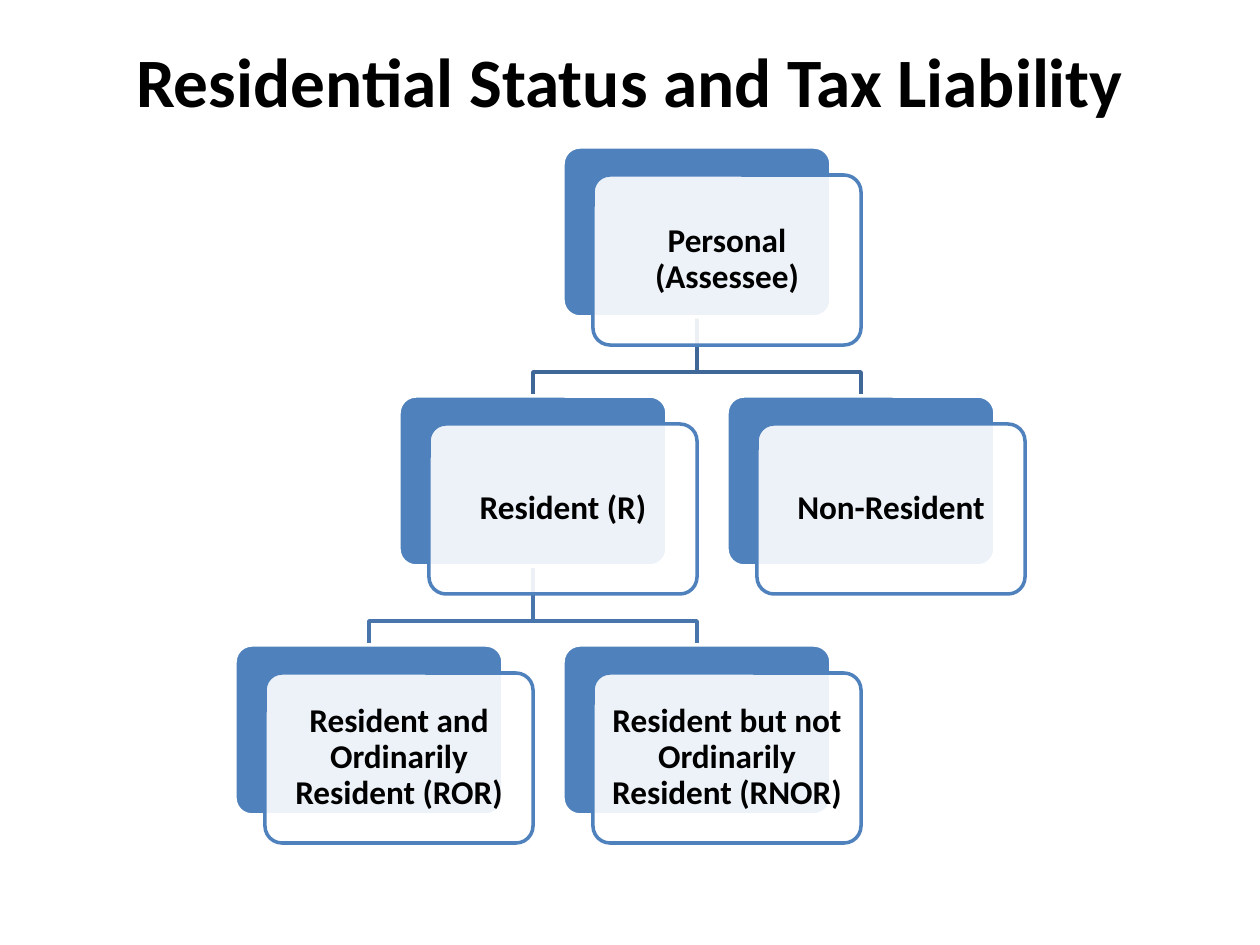
from lxml import etree
from pptx import Presentation
from pptx.dml.color import RGBColor
from pptx.enum.shapes import MSO_SHAPE as SHAPE
from pptx.enum.text import MSO_ANCHOR as ANCHOR, PP_ALIGN as ALIGN
from pptx.oxml.ns import qn
from pptx.util import Pt

PX = 914400 / 126
BLUE, WHITE, BLACK = "4F81BD", "FFFFFF", "000000"
COL_X, COL_STEP = 235, 164
ROW_Y, ROW_STEP = 147, 249
BOX_W, BOX_H = 268, 170
SHIFT_X, SHIFT_Y, PAD, INSET = 30, 28, 5, 10
BEND = 55


def px(*values):
    """Turn lengths in px into EMU."""
    return [round(v * PX) for v in values]


def rgb(code):
    return RGBColor.from_string(code)


prs = Presentation()
prs.slide_width, prs.slide_height = px(1260, 945)
s = prs.slides.add_slide(prs.slide_layouts[6])

# Column, row and label of each box
boxes = {
    "person": (2, 0, "Personal (Assessee)"),
    "resident": (1, 1, "Resident (R)"),
    "ror": (0, 2, "Resident and Ordinarily Resident (ROR)"),
    "rnor": (2, 2, "Resident but not Ordinarily Resident (RNOR)"),
    "nonresident": (3, 1, "Non-Resident"),
}
branches = [
    ("person", "nonresident", "3F6797"),
    ("resident", "rnor", "4875AC"),
    ("resident", "ror", "4875AC"),
    ("person", "resident", "3F6797"),
]
corner = {
    name: (COL_X + col * COL_STEP, ROW_Y + row * ROW_STEP)
    for name, (col, row, label) in boxes.items()
}
texts = []

# Title
title = s.shapes.add_textbox(*px(63, 38, 1134, 157))
title.text_frame.margin_top = 0
texts.append((title, "Residential Status and Tax Liability", 39.6, ANCHOR.TOP))

# Branches, behind the boxes
for parent, child, color in branches:
    x1, y1 = corner[parent][0] + BOX_W // 2, corner[parent][1] + BOX_H
    x2, y2 = corner[child][0] + BOX_W // 2, corner[child][1]
    builder = s.shapes.build_freeform(x1, y1, scale=PX)
    bend_y = y1 + BEND
    builder.add_line_segments([(x1, bend_y), (x2, bend_y), (x2, y2)], close=False)
    sp = builder.convert_to_shape()
    sp.shadow.inherit = False
    sp.fill.background()
    sp.line.color.rgb = rgb(color)
    sp.line.width = Pt(2)

# Boxes: a solid back card, a translucent front card and the label
for name, (col, row, label) in boxes.items():
    x, y = corner[name]
    front_x, front_y = x + SHIFT_X, y + SHIFT_Y
    for left, top, fill, line in ((x, y, BLUE, WHITE), (front_x, front_y, WHITE, BLUE)):
        card = s.shapes.add_shape(SHAPE.ROUNDED_RECTANGLE, *px(left, top, BOX_W, BOX_H))
        card.adjustments[0] = 0.1
        card.shadow.inherit = False
        card.fill.solid()
        card.fill.fore_color.rgb = rgb(fill)
        card.line.color.rgb = rgb(line)
        card.line.width = Pt(2)
    color_xml = card.fill._xPr.find(qn("a:solidFill"))[0]
    etree.SubElement(color_xml, qn("a:alpha")).set("val", "90000")

    box = s.shapes.add_textbox(
        *px(front_x + PAD, front_y + PAD, BOX_W - 2 * PAD, BOX_H - 2 * PAD))
    tf = box.text_frame
    tf.margin_left, tf.margin_top, tf.margin_right, tf.margin_bottom = px(*[INSET] * 4)
    tf.paragraphs[0].line_spacing = 0.9
    texts.append((box, label, 19, ANCHOR.MIDDLE))

for box, text, size, anchor in texts:
    tf = box.text_frame
    tf.word_wrap = True
    tf.vertical_anchor = anchor
    p = tf.paragraphs[0]
    p.alignment = ALIGN.CENTER
    r = p.add_run()
    r.text = text
    r.font.name = "Calibri"
    r.font.size = Pt(size)
    r.font.bold = True
    r.font.color.rgb = rgb(BLACK)

prs.save("out.pptx")
